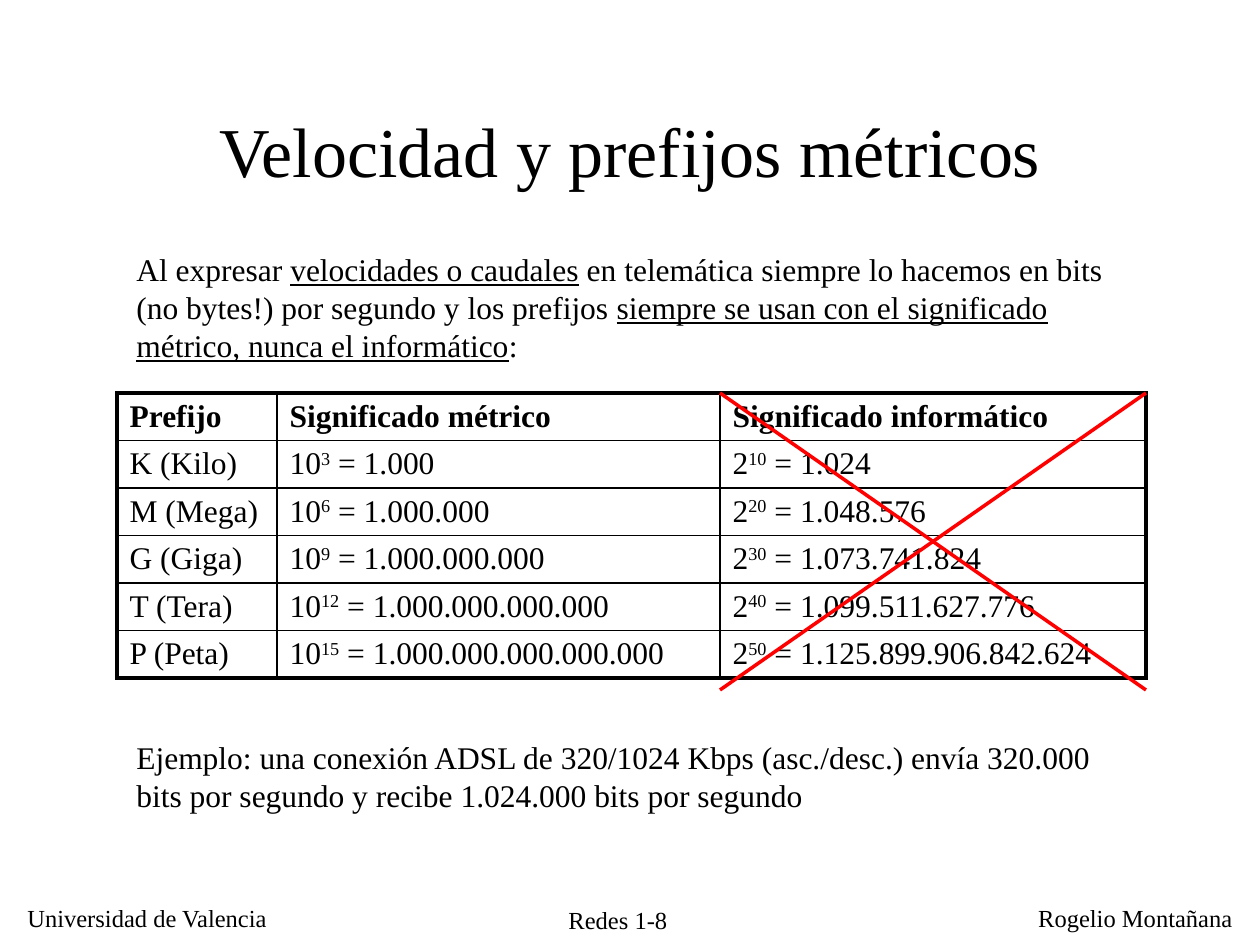
from lxml import etree
from pptx import Presentation, util as u
from pptx.dml.color import RGBColor
from pptx.enum import shapes, text
from pptx.oxml.ns import qn

PX = 914400 // 126
FONT = "Times New Roman"
BLACK, RED = "000000", "FF0000"


def color(code):
    return RGBColor.from_string(code)


def write(frame, parts, size, align=text.PP_ALIGN.LEFT, bold=False):
    """Fill the first paragraph with (words, style) parts; style is "", "u" or "sup"."""
    para = frame.paragraphs[0]
    para.alignment = align
    font = para.font
    font.name, font.size, font.bold = FONT, u.Pt(size), bold
    font.color.rgb = color(BLACK)
    for words, style in parts:
        run = para.add_run()
        run.text = words
        if style == "u":
            run.font.underline = True
        elif style == "sup":
            run._r.get_or_add_rPr().set("baseline", "30000")


prs = Presentation()
prs.slide_width, prs.slide_height = 1260 * PX, 945 * PX
slide = prs.slides.add_slide(prs.slide_layouts[6])

# Title, paragraphs and footer
intro = [
    ("Al expresar ", ""),
    ("velocidades o caudales", "u"),
    (" en telemática siempre lo hacemos en bits (no bytes!) por segundo y los prefijos ", ""),
    ("siempre se usan con el significado métrico, nunca el informático", "u"),
    (":", ""),
]
sample = ("Ejemplo: una conexión ADSL de 320/1024 Kbps (asc./desc.) envía 320.000 "
          "bits por segundo y recibe 1.024.000 bits por segundo")
left, mid, right = text.PP_ALIGN.LEFT, text.PP_ALIGN.CENTER, text.PP_ALIGN.RIGHT
boxes = [
    ((94, 84, 1072, 131), [("Velocidad y prefijos métricos", "")], 40, mid),
    ((124, 244, 1022, 126), intro, 18, left),
    ((124, 732, 1022, 88), [(sample, "")], 18, left),
    ((15, 897, 300, 42), [("Universidad de Valencia", "")], 14, left),
    ((536, 899, 164, 38), [("Redes 1-8", "")], 14, mid),
    ((945, 897, 300, 42), [("Rogelio Montañana", "")], 14, right),
]
for place, parts, size, align in boxes:
    box = slide.shapes.add_textbox(*(n * PX for n in place))
    box.text_frame.word_wrap = True
    if size == 40:
        box.text_frame.vertical_anchor = text.MSO_ANCHOR.MIDDLE
    write(box.text_frame, parts, size, align)

# Table of prefixes
heads = ["Prefijo", "Significado métrico", "Significado informático"]
names = ["K (Kilo)", "M (Mega)", "G (Giga)", "T (Tera)", "P (Peta)"]
rows = [[[(head, "")] for head in heads]]
for n, name in enumerate(names, 1):
    row = [[(name, "")]]
    for base, power in ((10, 3 * n), (2, 10 * n)):
        value = f"{base ** power:,}".replace(",", ".")
        row.append([(str(base), ""), (str(power), "sup"), (f" = {value}", "")])
    rows.append(row)

wide = [160, 443, 426]
top, tall = 393, 285
grid = slide.shapes.add_table(len(rows), len(wide), 117 * PX, top * PX,
                              sum(wide) * PX, tall * PX).table
grid.first_row = grid.horz_banding = False
for col, width in zip(grid.columns, wide):
    col.width = width * PX
for i, row in enumerate(rows):
    grid.rows[i].height = tall * PX // len(rows)
    for j, parts in enumerate(row):
        cell = grid.cell(i, j)
        cell.margin_bottom = 2 * PX
        write(cell.text_frame, parts, 18, bold=i == 0)
        # Thick rule on the outer edge, thin rule inside
        outer = {"L": j == 0, "R": j == len(wide) - 1,
                 "T": i == 0, "B": i == len(rows) - 1}
        props = cell._tc.get_or_add_tcPr()
        for side, thick in outer.items():
            rule = etree.SubElement(props, qn(f"a:ln{side}"),
                                    w=str(u.Pt(2.25 if thick else 1)))
            fill = etree.SubElement(rule, qn("a:solidFill"))
            etree.SubElement(fill, qn("a:srgbClr"), val=BLACK)
        cell.fill.background()

# Red cross over the last column
low = 690
for start, end in ((top, low), (low, top)):
    line = slide.shapes.add_connector(shapes.MSO_CONNECTOR.STRAIGHT,
                                      720 * PX, start * PX, 1146 * PX, end * PX)
    line.line.color.rgb = color(RED)
    line.line.width = u.Pt(2)
    etree.SubElement(line._element.spPr, qn("a:effectLst"))

prs.save("out.pptx")
